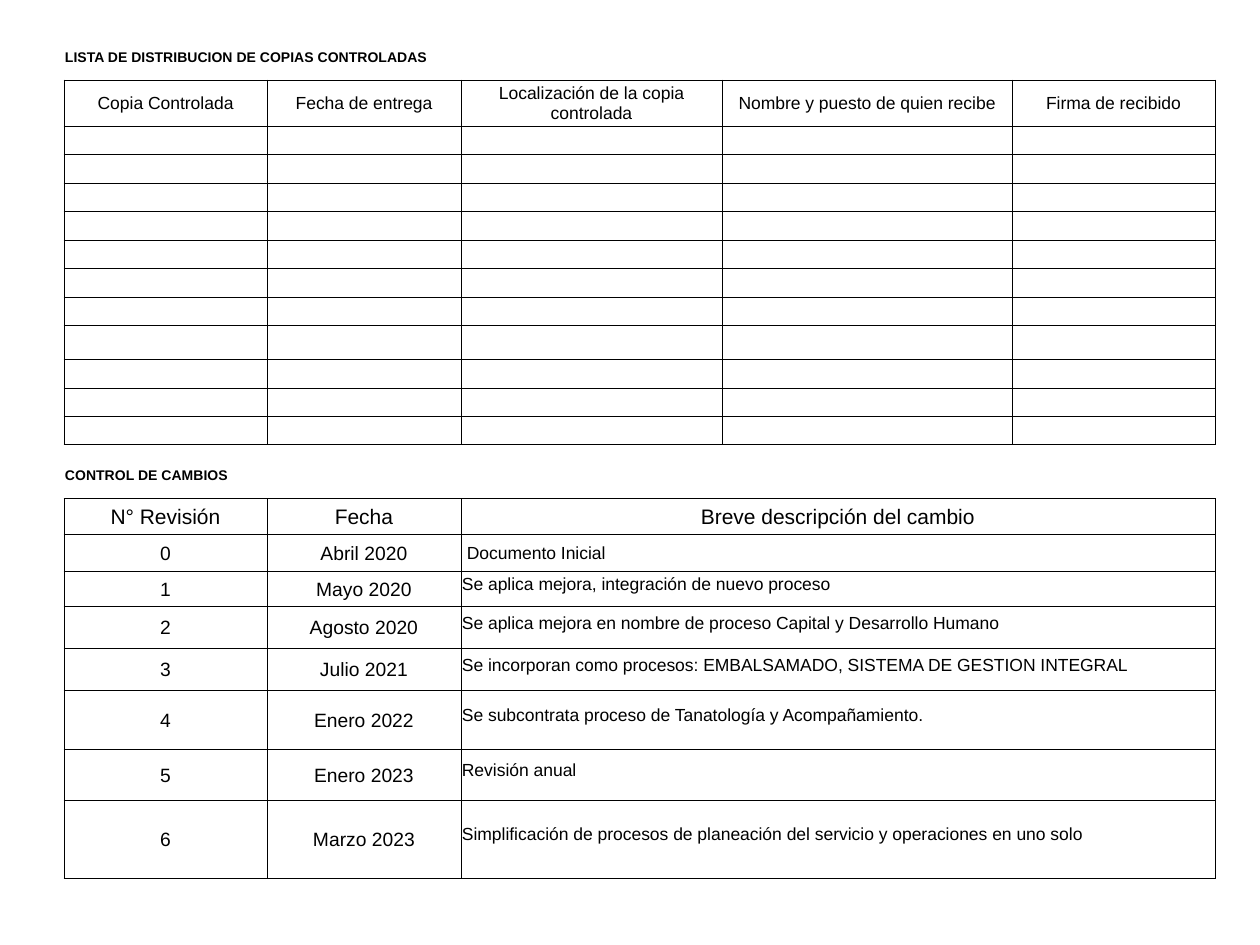
from dataclasses import dataclass
from itertools import accumulate

from lxml import etree
from pptx import Presentation
from pptx.dml.color import RGBColor
from pptx.enum.text import MSO_ANCHOR, PP_ALIGN
from pptx.oxml.ns import qn
from pptx.util import Pt

BOTTOM, MIDDLE = MSO_ANCHOR.BOTTOM, MSO_ANCHOR.MIDDLE
LEFT, CENTER, JUSTIFY = PP_ALIGN.LEFT, PP_ALIGN.CENTER, PP_ALIGN.JUSTIFY
PX_PER_INCH = 126
EMU_PER_PX = 914400 / PX_PER_INCH


def px(length):
    return round(length * EMU_PER_PX)


@dataclass(frozen=True)
class Theme:
    font: str = "Arial"
    ink: str = "000000"
    title: int = 8
    body: int = 10
    label: int = 11
    heading: int = 12
    border: float = 0.5


class SlideBuilder:
    def __init__(self, deck, theme):
        self.theme = theme
        self.slide = deck.slides.add_slide(deck.slide_layouts[6])

    def table(self, left, top, widths, heights):
        frame = self.slide.shapes.add_table(
            len(heights), len(widths), px(left), px(top), px(sum(widths)), px(sum(heights)))
        table = frame.table
        table.first_row = table.horz_banding = False
        for column, width in zip(table.columns, widths):
            column.width = px(width)
        for row, height in zip(table.rows, heights):
            row.height = px(height)
        return table

    def borders(self, cell, sides):
        """Rule the named sides (letters from LRTB) and clear the others."""
        properties = cell._tc.get_or_add_tcPr()
        for index, side in enumerate("LRTB"):
            line = etree.Element(qn(f"a:ln{side}"), w=str(Pt(self.theme.border)))
            if side in sides:
                fill = etree.SubElement(line, qn("a:solidFill"))
                etree.SubElement(fill, qn("a:srgbClr"), val=self.theme.ink)
            else:
                etree.SubElement(line, qn("a:noFill"))
            properties.insert(index, line)

    def cell(self, table, row, first, last, text="", size=Theme.title, bold=False,
             align=CENTER, anchor=MIDDLE, sides="LRTB", insets=(1, 1, 1, 0), merged=True):
        """Fill the columns first to last as one cell, merged or only ruled as one."""
        for column in range(first, last + 1):
            part = table.cell(row, column)
            part.fill.background()
            inner = ("L" if column > first else "") + ("R" if column < last else "")
            self.borders(part, sides if merged else set(sides) - set(inner))
            part.vertical_anchor = anchor
            for name, inset in zip(("left", "top", "right", "bottom"), insets):
                setattr(part, f"margin_{name}", px(inset))
            para = part.text_frame.paragraphs[0]
            if column > first or not text:
                etree.SubElement(para._p, qn("a:endParaRPr"), sz=str(size * 100))
                continue
            para.alignment = align
            span = para.add_run()
            span.text = text
            font_format = {"name": self.theme.font, "size": Pt(size), "bold": bold}
            for name, value in font_format.items():
                setattr(span.font, name, value)
            span.font.color.rgb = RGBColor.from_string(self.theme.ink)
        if merged and last > first:
            table.cell(row, first).merge(table.cell(row, last))

    def row(self, table, row, spans, texts, **style):
        for (first, last), text in zip(spans, texts):
            self.cell(table, row, first, last, text, **style)


COPY_HEADINGS = [
    "Copia Controlada", "Fecha de entrega", "Localización de la copia controlada",
    "Nombre y puesto de quien recibe", "Firma de recibido",
]
CHANGE_HEADINGS = ["N° Revisión", "Fecha", "Breve descripción del cambio"]
PADDED = (1, 1, 10, 10)
CHANGES = [
    ("Abril 2020", "Documento Inicial", JUSTIFY, (6, 1, 1, 0)),
    ("Mayo 2020", "Se aplica mejora, integración de nuevo proceso", LEFT, (1, 1, 1, 10)),
    ("Agosto 2020", "Se aplica mejora en nombre de proceso Capital y Desarrollo Humano",
     JUSTIFY, PADDED),
    ("Julio 2021", "Se incorporan como procesos: EMBALSAMADO, SISTEMA DE GESTION INTEGRAL",
     JUSTIFY, PADDED),
    ("Enero 2022", "Se subcontrata proceso de Tanatología y Acompañamiento.", JUSTIFY, PADDED),
    ("Enero 2023", "Revisión anual", JUSTIFY, PADDED),
    ("Marzo 2023",
     "Simplificación de procesos de planeación del servicio y operaciones en uno solo",
     JUSTIFY, PADDED),
]

COLUMN_WIDTHS = [101, 102, 194, 101, 160, 101, 189, 101, 102]
COPY_SPANS = [(0, 1), (2, 2), (3, 4), (5, 6), (7, 8)]
CHANGE_SPANS = [(0, 1), (2, 2), (3, 8)]
TITLE_SPAN = (0, 8)
SPLIT_ROWS, HALF_SPLIT_ROW = {3, 4, 5, 6, 7, 8, 10}, 9
MERGED_IN_HALF_SPLIT = COPY_SPANS[2:4]
TITLE_HEIGHT, COPY_HEADING_HEIGHT, GAP_HEIGHT, CHANGE_HEADING_HEIGHT = 34, 46, 20, 36
COPY_HEIGHTS = [28, 29, 29, 29, 28, 29, 28, 34, 29, 28, 28]
CHANGE_HEIGHTS = [37, 35, 42, 42, 59, 51, 78]


def is_merged(row, span):
    if row == HALF_SPLIT_ROW:
        return span in MERGED_IN_HALF_SPLIT
    return row not in SPLIT_ROWS


def main():
    theme = Theme()
    deck = Presentation()
    deck.slide_width, deck.slide_height = px(1260), px(945)
    page = SlideBuilder(deck, theme)

    sections = [
        [TITLE_HEIGHT, COPY_HEADING_HEIGHT], COPY_HEIGHTS,
        [GAP_HEIGHT], [TITLE_HEIGHT, CHANGE_HEADING_HEIGHT], CHANGE_HEIGHTS,
    ]
    table = page.table(64, 46, COLUMN_WIDTHS, sum(sections, []))
    copies, gap, change_title, changes = list(accumulate(map(len, sections)))[:4]
    title_style = {"size": theme.title, "bold": True, "align": LEFT,
                   "anchor": BOTTOM, "sides": "B", "insets": (1, 1, 1, 15)}

    page.cell(table, 0, *TITLE_SPAN, "LISTA DE DISTRIBUCION DE COPIAS CONTROLADAS", **title_style)
    page.row(table, 1, COPY_SPANS, COPY_HEADINGS, size=theme.body)
    for row in range(copies, gap):
        for span in COPY_SPANS:
            page.cell(table, row, *span, merged=is_merged(row, span))
    page.row(table, gap, COPY_SPANS, [""] * len(COPY_SPANS), sides="T")

    page.cell(table, change_title, *TITLE_SPAN, "CONTROL DE CAMBIOS", **title_style)
    page.row(table, change_title + 1, CHANGE_SPANS, CHANGE_HEADINGS, size=theme.heading)
    for revision, (date, description, align, insets) in enumerate(CHANGES):
        row = changes + revision
        page.row(table, row, CHANGE_SPANS[:2], [str(revision), date], size=theme.label)
        page.cell(table, row, *CHANGE_SPANS[2], description, size=theme.body,
                  align=align, insets=insets)

    deck.save("out.pptx")


if __name__ == "__main__":
    main()
